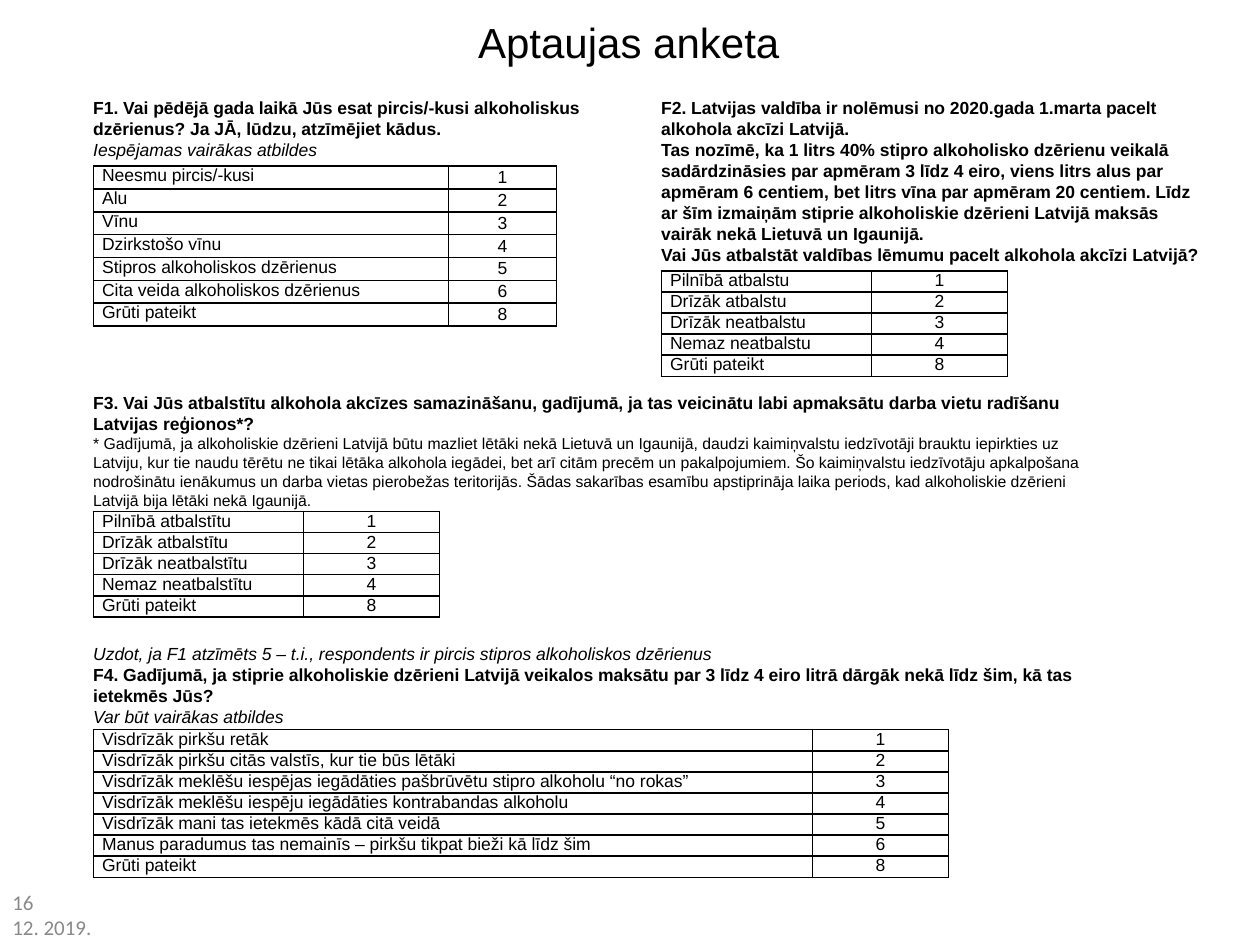
from lxml.etree import SubElement
from pptx import Presentation
from pptx.dml.color import RGBColor
from pptx.enum.text import MSO_ANCHOR as Anchor, MSO_AUTO_SIZE as Fit, PP_ALIGN as Align
from pptx.oxml.ns import qn
from pptx.util import Cm, Pt

INK, GREY = "000000", "898989"
INDENT = 0.25  # text inset, so that tables line up with the question text
ROW = 0.42
SCALE = [1, 2, 3, 4, 8]
LONG = [1, 2, 3, 4, 5, 6, 8]


def paint(color, code):
    color.rgb = RGBColor.from_string(code)


def style(para, size=10, bold=False, italic=False, color=INK, face="Arial"):
    for run in para.runs:
        font = run.font
        font.name, font.size = face, Pt(size)
        font.bold, font.italic = bold, italic
        paint(font.color, color)


def add_title(slide, box, text):
    title = slide.shapes.title
    title.left, title.top, title.width, title.height = map(Cm, box)
    frame = title.text_frame
    frame.text = text
    frame.vertical_anchor = Anchor.MIDDLE
    frame.paragraphs[0].alignment = Align.CENTER
    style(frame.paragraphs[0], 24)


def add_text(slide, box, lines, fit=Fit.SHAPE_TO_FIT_TEXT):
    frame = slide.shapes.add_textbox(*map(Cm, box)).text_frame
    frame.word_wrap = True
    frame.auto_size = fit
    frame.text = "\n".join(text for text, _ in lines)
    for para, (_, look) in zip(frame.paragraphs, lines):
        style(para, **look)


def add_border(cell):
    props = cell._tc.get_or_add_tcPr()
    for i, side in enumerate(("a:lnL", "a:lnR", "a:lnT", "a:lnB")):
        line = props.makeelement(qn(side), {"w": str(Pt(1))})
        fill = SubElement(line, qn("a:solidFill"))
        SubElement(fill, qn("a:srgbClr"), val=INK)
        props.insert(i, line)


def add_answers(slide, left, top, widths, answers, codes, row=ROW, anchor=Anchor.TOP):
    count = len(answers)
    table = slide.shapes.add_table(
        count, 2, Cm(left), Cm(top), Cm(sum(widths)), Cm(row * count)).table
    table.first_row = table.horz_banding = False
    for col, width in zip(table.columns, widths):
        col.width = Cm(width)
    for r, pair in enumerate(zip(answers, codes)):
        table.rows[r].height = Cm(row)
        for c, value in enumerate(pair):
            cell = table.cell(r, c)
            cell.text = str(value)
            cell.margin_left = cell.margin_right = Cm(0.18)
            cell.margin_top = cell.margin_bottom = 0
            cell.vertical_anchor = anchor if c else Anchor.TOP
            cell.fill.background()
            add_border(cell)
            para = cell.text_frame.paragraphs[0]
            para.alignment = Align.CENTER if c else Align.LEFT
            style(para)


def add_question(slide, box, lines, drop, widths, answers, codes, **look):
    """Question text in box, with its answer table drop cm below the top."""
    add_text(slide, box, lines)
    add_answers(slide, box[0] + INDENT, box[1] + drop, widths, answers, codes, **look)


def main():
    deck = Presentation()
    deck.slide_width, deck.slide_height = Cm(25.4), Cm(19.05)
    slide = deck.slides.add_slide(deck.slide_layouts[5])
    bold, italic = {"bold": True}, {"italic": True}

    # Date and title
    date = {"size": 12, "color": GREY, "face": "Calibri"}
    add_text(slide, (0, 17.81, 3.25, 1.24), [("16", date), ("12. 2019.", date)], Fit.NONE)
    add_title(slide, (3.3, 0, 18.75, 1.7), "Aptaujas anketa")

    # F1: purchases
    add_question(
        slide, (1.63, 1.83, 10.69, 1.55),
        [("F1. Vai pēdējā gada laikā Jūs esat pircis/-kusi alkoholiskus dzērienus? "
          "Ja JĀ, lūdzu, atzīmējiet kādus.", bold),
         ("Iespējamas vairākas atbildes", italic)],
        1.52, (7.16, 2.18),
        ["Neesmu pircis/-kusi", "Alu", "Vīnu", "Dzirkstošo vīnu",
         "Stipros alkoholiskos dzērienus", "Cita veida alkoholiskos dzērienus",
         "Grūti pateikt"],
        LONG, row=0.46, anchor=Anchor.MIDDLE)

    # F2: raising the duty
    add_question(
        slide, (13.08, 1.83, 11.46, 3.68),
        [("F2. Latvijas valdība ir nolēmusi no 2020.gada 1.marta pacelt alkohola "
          "akcīzi Latvijā.", bold),
         ("Tas nozīmē, ka 1 litrs 40% stipro alkoholisko dzērienu veikalā "
          "sadārdzināsies par apmēram 3 līdz 4 eiro, viens litrs alus par apmēram "
          "6 centiem, bet litrs vīna par apmēram 20 centiem. Līdz ar šīm izmaiņām "
          "stiprie alkoholiskie dzērieni Latvijā maksās vairāk nekā Lietuvā un "
          "Igaunijā.", bold),
         ("Vai Jūs atbalstāt valdības lēmumu pacelt alkohola akcīzi Latvijā?", bold)],
        3.63, (4.24, 2.74),
        ["Pilnībā atbalstu", "Drīzāk atbalstu", "Drīzāk neatbalstu",
         "Nemaz neatbalstu", "Grūti pateikt"], SCALE)

    # F3: lowering the duty
    add_question(
        slide, (1.63, 7.77, 20.4, 2.64),
        [("F3. Vai Jūs atbalstītu alkohola akcīzes samazināšanu, gadījumā, ja tas "
          "veicinātu labi apmaksātu darba vietu radīšanu Latvijas reģionos*?", bold),
         ("* Gadījumā, ja alkoholiskie dzērieni Latvijā būtu mazliet lētāki nekā "
          "Lietuvā un Igaunijā, daudzi kaimiņvalstu iedzīvotāji brauktu iepirkties "
          "uz Latviju, kur tie naudu tērētu ne tikai lētāka alkohola iegādei, bet "
          "arī citām precēm un pakalpojumiem. Šo kaimiņvalstu iedzīvotāju "
          "apkalpošana nodrošinātu ienākumus un darba vietas pierobežas "
          "teritorijās. Šādas sakarības esamību apstiprināja laika periods, kad "
          "alkoholiskie dzērieni Latvijā bija lētāki nekā Igaunijā.", {"size": 9})],
        2.54, (4.24, 2.74),
        ["Pilnībā atbalstītu", "Drīzāk atbalstītu", "Drīzāk neatbalstītu",
         "Nemaz neatbalstītu", "Grūti pateikt"], SCALE)

    # F4: effect of dearer spirits
    add_question(
        slide, (1.63, 12.83, 20.4, 1.96),
        [("Uzdot, ja F1 atzīmēts 5 – t.i., respondents ir pircis stipros "
          "alkoholiskos dzērienus", italic),
         ("F4. Gadījumā, ja stiprie alkoholiskie dzērieni Latvijā veikalos maksātu "
          "par 3 līdz 4 eiro litrā dārgāk nekā līdz šim, kā tas ietekmēs Jūs?", bold),
         ("Var būt vairākas atbildes", italic)],
        1.88, (14.5, 2.74),
        ["Visdrīzāk pirkšu retāk",
         "Visdrīzāk pirkšu citās valstīs, kur tie būs lētāki",
         "Visdrīzāk meklēšu iespējas iegādāties pašbrūvētu stipro alkoholu “no rokas”",
         "Visdrīzāk meklēšu iespēju iegādāties kontrabandas alkoholu",
         "Visdrīzāk mani tas ietekmēs kādā citā veidā",
         "Manus paradumus tas nemainīs – pirkšu tikpat bieži kā līdz šim",
         "Grūti pateikt"], LONG)

    deck.save("out.pptx")


if __name__ == "__main__":
    main()
